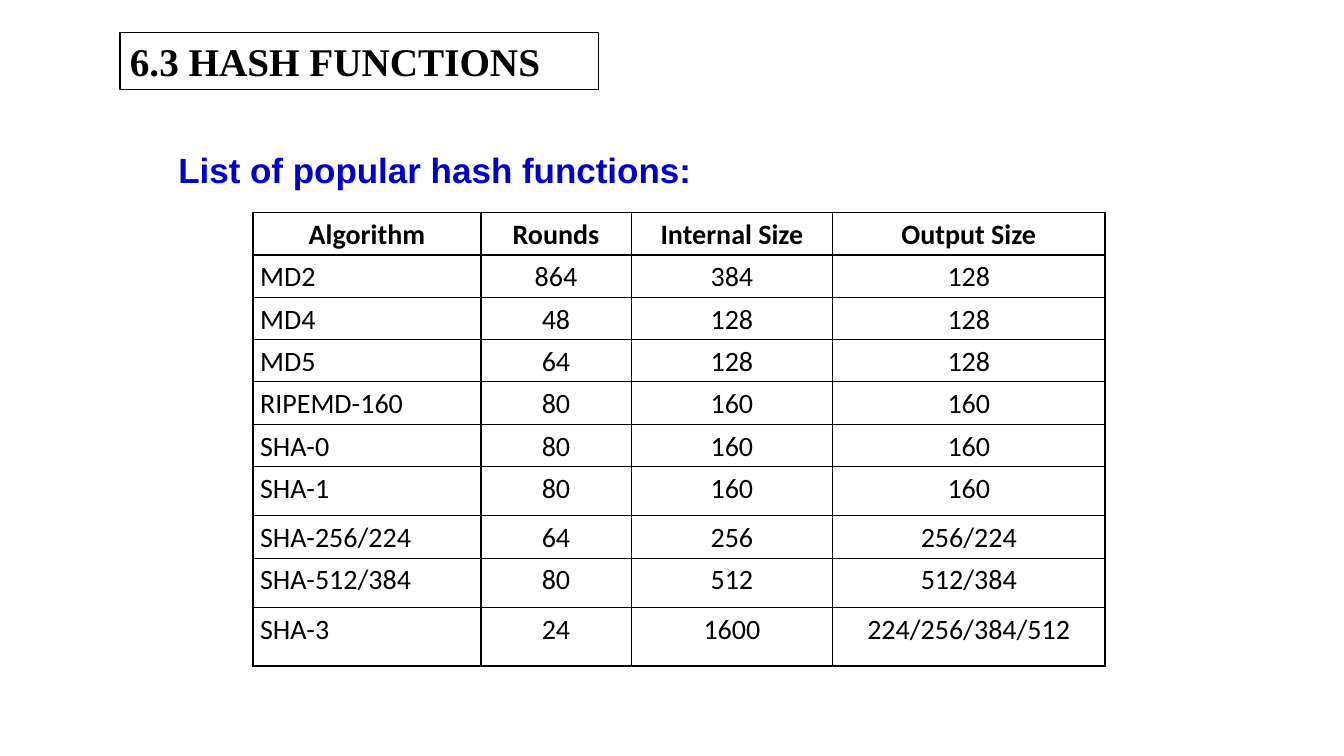
from pptx import Presentation
from pptx import util as u
from pptx.dml.color import RGBColor
from pptx.enum import shapes, text
from pptx.oxml import parse_xml
from pptx.oxml.ns import nsdecls

BLACK = RGBColor(0x00, 0x00, 0x00)
BLUE = RGBColor(0x00, 0x00, 0xCC)

COLUMN_WIDTHS = (2.26, 1.49, 2, 2.7)
ROW_HEIGHTS = (0.42,) * 6 + (0.49, 0.42, 0.49, 0.58)
HASH_FUNCTIONS = (
    ("Algorithm", "Rounds", "Internal Size", "Output Size"),
    ("MD2", "864", "384", "128"),
    ("MD4", "48", "128", "128"),
    ("MD5", "64", "128", "128"),
    ("RIPEMD-160", "80", "160", "160"),
    ("SHA-0", "80", "160", "160"),
    ("SHA-1", "80", "160", "160"),
    ("SHA-256/224", "64", "256", "256/224"),
    ("SHA-512/384", "80", "512", "512/384"),
    ("SHA-3", "24", "1600", "224/256/384/512"),
)


def write(frame, words, font, size, color, bold=True):
    """Add a run to the first paragraph and return that paragraph."""
    para = frame.paragraphs[0]
    span = para.add_run()
    span.text = words
    span.font.name = font
    span.font.size = u.Pt(size)
    span.font.color.rgb = color
    span.font.bold = bold
    return para


def add_title(page, words):
    box = page.shapes.add_shape(
        shapes.MSO_SHAPE.RECTANGLE,
        u.Inches(1.19), u.Inches(0.32), u.Inches(4.75), u.Inches(0.57))
    box.shadow.inherit = False
    box.fill.background()
    box.line.color.rgb = BLACK
    box.line.width = u.Pt(0.75)
    frame = box.text_frame
    frame.word_wrap = True
    frame.vertical_anchor = text.MSO_ANCHOR.TOP
    para = write(frame, words, "Times New Roman", 28, BLACK)
    para.alignment = text.PP_ALIGN.LEFT


def add_subtitle(page, words):
    box = page.shapes.add_textbox(
        u.Inches(1.67), u.Inches(1.07), u.Inches(8.09), u.Inches(0.81))
    frame = box.text_frame
    frame.word_wrap = True
    frame.vertical_anchor = text.MSO_ANCHOR.MIDDLE
    para = write(frame, words, "Arial", 25, BLUE)
    para.line_spacing = 2.0


def add_borders(cell):
    """Draw a thin black line on all four sides, ahead of the cell's fill."""
    properties = cell._tc.get_or_add_tcPr()
    for position, side in enumerate(("lnL", "lnR", "lnT", "lnB")):
        properties.insert(position, parse_xml(
            f'<a:{side} {nsdecls("a")} w="{u.Pt(1)}"><a:solidFill>'
            f'<a:srgbClr val="{BLACK}"/></a:solidFill></a:{side}>'))


def fill_cell(cell, words, alignment, bold):
    cell.margin_left = cell.margin_right = u.Inches(0.07)
    cell.margin_top = cell.margin_bottom = 0
    cell.fill.background()
    add_borders(cell)
    para = write(cell.text_frame, words, "Calibri", 20, BLACK, bold)
    para.alignment = alignment
    para.line_spacing = 1.15
    para.space_after = u.Pt(10)


def add_hash_table(page):
    table = page.shapes.add_table(
        len(ROW_HEIGHTS), len(COLUMN_WIDTHS), u.Inches(2.51), u.Inches(2.11),
        u.Inches(sum(COLUMN_WIDTHS)), u.Inches(sum(ROW_HEIGHTS))).table
    table.horz_banding = False
    for column, width in zip(table.columns, COLUMN_WIDTHS):
        column.width = u.Inches(width)
    for row, height in zip(table.rows, ROW_HEIGHTS):
        row.height = u.Inches(height)
    for r, entries in enumerate(HASH_FUNCTIONS):
        for c, words in enumerate(entries):
            is_name = r > 0 and c == 0
            alignment = (text.PP_ALIGN.JUSTIFY if is_name
                         else text.PP_ALIGN.CENTER)
            fill_cell(table.cell(r, c), words, alignment, bold=r == 0)


def main():
    deck = Presentation()
    deck.slide_width = u.Inches(13.33)
    deck.slide_height = u.Inches(7.5)
    page = deck.slides.add_slide(deck.slide_layouts[6])
    add_hash_table(page)
    add_title(page, "6.3 HASH FUNCTIONS")
    add_subtitle(page, "List of popular hash functions:")
    deck.save("out.pptx")


if __name__ == "__main__":
    main()
